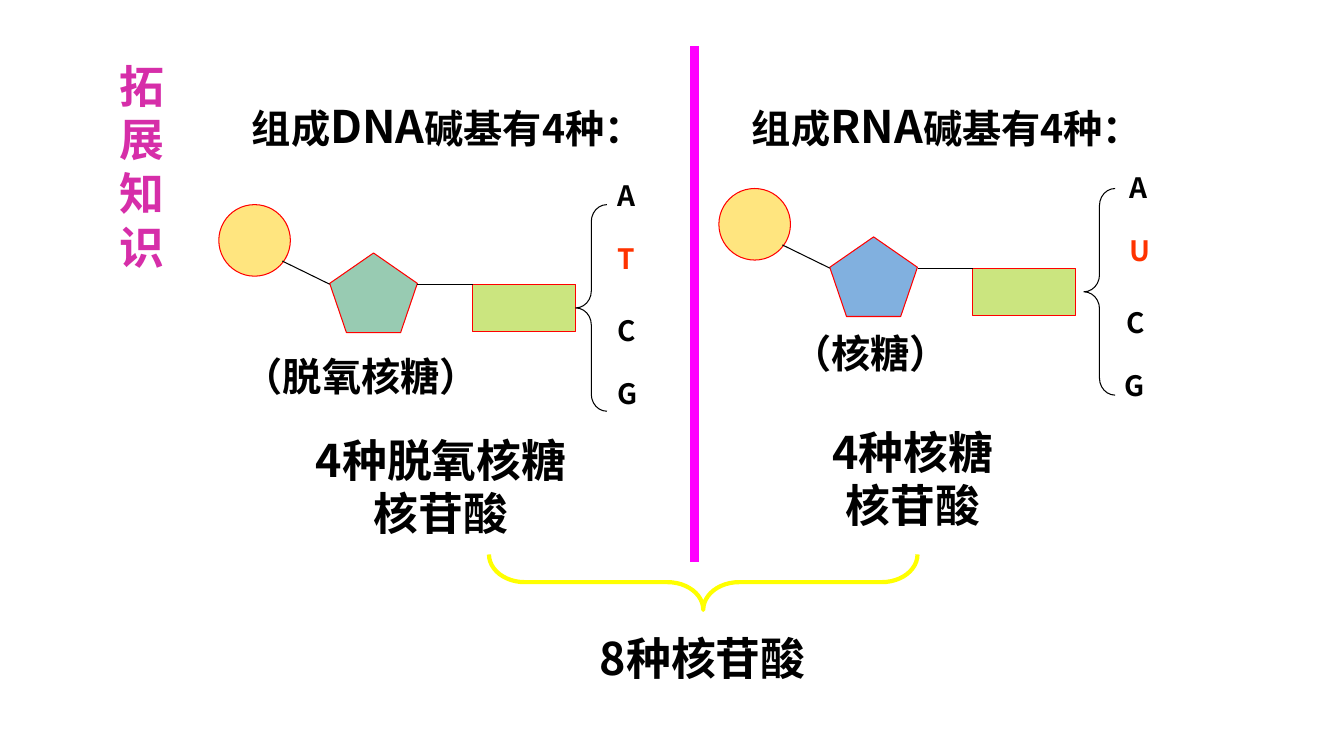
from lxml import etree
from pptx import Presentation
from pptx import util as u
from pptx.dml.color import RGBColor
from pptx.enum import shapes, text
from pptx.oxml.ns import qn

PX = 9144  # 100 px to the inch
FONT = "Noto Sans CJK SC"
BLACK, RED, ACCENT = "000000", "FF0000", "FF3300"
FORMS = shapes.MSO_SHAPE

deck = Presentation()
deck.slide_width, deck.slide_height = 1333 * PX, 750 * PX
slide = deck.slides.add_slide(deck.slide_layouts[6])


def draw(kind, box, fill=None, alpha=50, line=None, weight=0.75):
    """Add a preset shape, or a straight line from (x1, y1) to (x2, y2) if kind is None."""
    box = [v * PX for v in box]
    if kind is None:
        part = slide.shapes.add_connector(shapes.MSO_CONNECTOR.STRAIGHT, *box)
        etree.SubElement(part._element.spPr, qn("a:effectLst"))
    else:
        part = slide.shapes.add_shape(kind, *box)
        part.shadow.inherit = False
        part.fill.background()
    if fill:
        part.fill.solid()
        part.fill.fore_color.rgb = RGBColor.from_string(fill)
        colour = part.fill._xPr.find(qn("a:solidFill"))[0]
        etree.SubElement(colour, qn("a:alpha"), val=str(alpha * 1000))
    if line:
        part.line.color.rgb = RGBColor.from_string(line)
        part.line.width = u.Pt(weight)
    else:
        part.line.fill.background()
    return part


def write(box, runs, colour=BLACK, font=FONT, backed=False):
    """Write (text, size) runs in a text box, or centred on a pale white panel."""
    if backed:
        holder = draw(FORMS.RECTANGLE, box, "FFFFFF", 70)
    else:
        holder = slide.shapes.add_textbox(*[v * PX for v in box])
    frame = holder.text_frame
    settings = {"word_wrap": True, "vertical_anchor": text.MSO_ANCHOR.TOP,
                "auto_size": text.MSO_AUTO_SIZE.SHAPE_TO_FIT_TEXT}
    for name, value in settings.items():
        setattr(frame, name, value)
    line = frame.paragraphs[0]
    line.alignment = text.PP_ALIGN.CENTER if backed else text.PP_ALIGN.LEFT
    for words, size in runs:
        run = line.add_run()
        run.text = words
        for name, value in {"size": u.Pt(size), "bold": True, "name": font}.items():
            setattr(run.font, name, value)
        run.font.color.rgb = RGBColor.from_string(colour)
        etree.SubElement(run.font._element, qn("a:ea"), typeface=FONT)


# Side title and divider
write((109, 53, 74, 225), [("拓展知识", 32)], "D62EA9", "Arial")
draw(None, (689, 46, 689, 558), line="FF00FF", weight=6)

# The two nucleotides: the right one is the left one moved by (dx, dy)
nucleotides = [
    {"acid": "DNA", "dx": 0, "dy": 0, "sugar_fill": "339966", "brace_x": 571,
     "sugar": "（脱氧核糖）", "sugar_box": (232, 345, 260, 57),
     "bases": "ATCG", "base_xs": (603, 603, 603, 603),
     "total": "4种脱氧核糖核苷酸", "total_box": (288, 424, 299, 118)},
    {"acid": "RNA", "dx": 496, "dy": -16, "sugar_fill": "0563C1", "brace_x": 1075,
     "sugar": "（核糖）", "sugar_box": (776, 322, 220, 57),
     "bases": "AUCG", "base_xs": (1110, 1110, 1107, 1105),
     "total": "4种核糖核苷酸", "total_box": (807, 416, 197, 118)},
]
for n in nucleotides:
    dx, dy = n["dx"], n["dy"]

    # Base, sugar and phosphate, with their bonds
    for kind, (x, y, w, h), fill in (
        (FORMS.RECTANGLE, (469, 282, 102, 47), "99CC00"),
        (FORMS.REGULAR_PENTAGON, (327, 251, 87, 79), n["sugar_fill"]),
        (FORMS.FLOWCHART_CONNECTOR, (217, 203, 71, 71), "FFCC00"),
    ):
        draw(kind, (x + dx, y + dy, w, h), fill, line=RED)
    for x1, y1, x2, y2 in ((280, 259, 327, 282), (414, 282, 469, 282)):
        draw(None, (x1 + dx, y1 + dy, x2 + dx, y2 + dy), line=BLACK)

    # Heading, sugar name and total
    write((240 + dx, 93, 425, 64),
          [("组成", 28), (n["acid"], 32), ("碱基有4种：", 28)])
    write(n["sugar_box"], [(n["sugar"], 28)])
    write(n["total_box"], [(n["total"], 32)], backed=True)

    # Brace and the four bases
    brace = draw(FORMS.LEFT_BRACE, (n["brace_x"], 203 + dy, 31, 205), line=BLACK)
    brace.adjustments[0] = 0.543
    for base, x, y in zip(n["bases"], n["base_xs"], (172, 235, 306, 369)):
        write((x, y + dy // 2, 79, 44), [(base, 20)],
              ACCENT if base in "TU" else BLACK)

# Sum of both sides
sum_brace = draw(FORMS.LEFT_BRACE, (670, 365, 55, 425), line="FFFF00", weight=3)
sum_brace.rotation = 270
sum_brace.adjustments[0] = 0.644
write((563, 621, 268, 64), [("8种核苷酸", 32)], backed=True)

deck.save("out.pptx")
